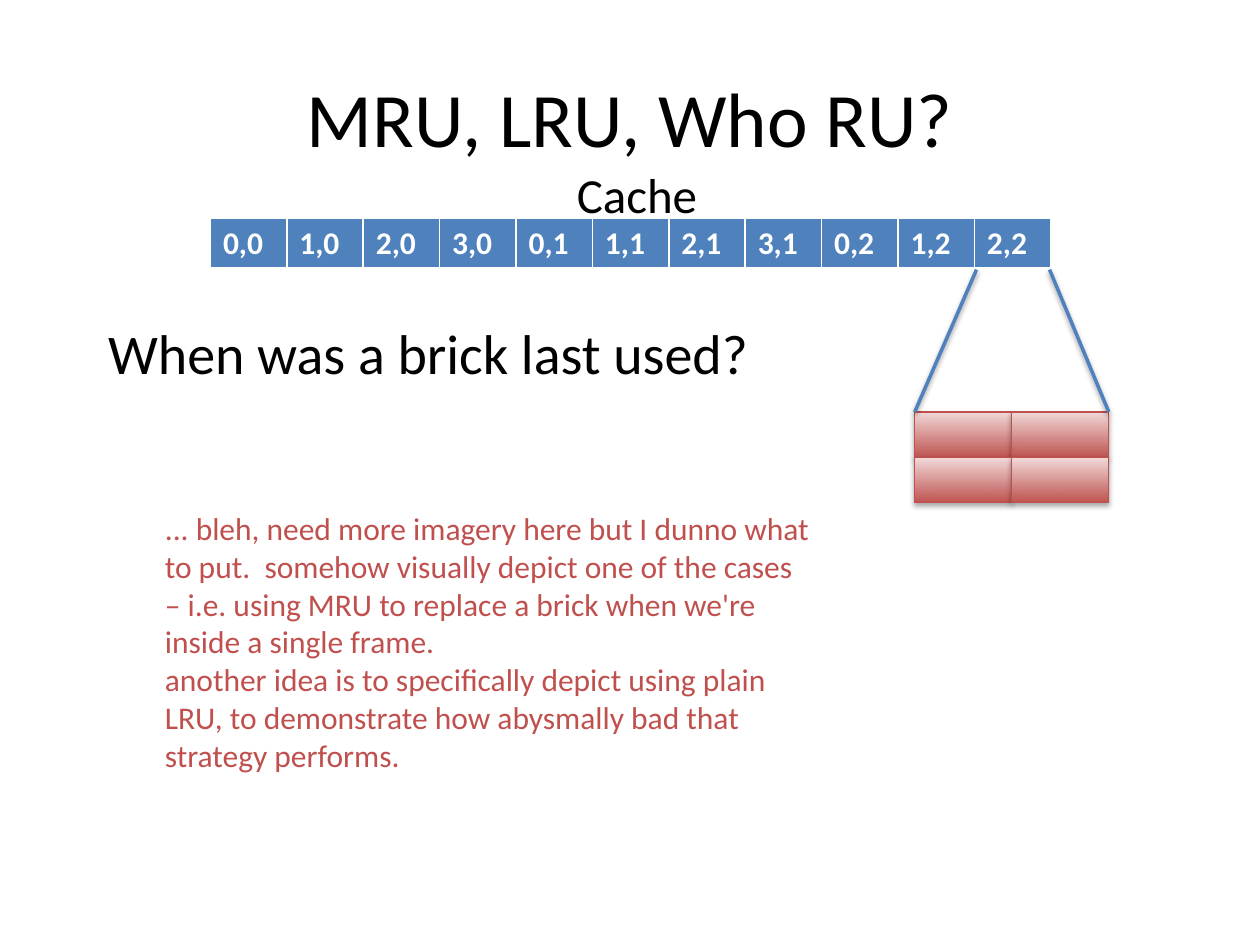
from dataclasses import dataclass

from lxml import etree
from pptx import Presentation
from pptx import oxml
from pptx import util as u
from pptx.dml.color import RGBColor
from pptx.enum import shapes, text
from pptx.oxml import ns


@dataclass(frozen=True)
class Theme:
    face: str = "Calibri"
    ink: str = "000000"
    white: str = "FFFFFF"
    blue: str = "4F81BD"
    red: str = "C0504D"
    pale: str = "F2DCDB"
    title: int = 44
    lead: int = 32
    label: int = 28
    body: int = 18


THEME = Theme()
CACHE = ["0,0", "1,0", "2,0", "3,0", "0,1", "1,1", "2,1", "3,1", "0,2", "1,2", "2,2"]
NOTES = [
    "... bleh, need more imagery here but I dunno what to put.  somehow visually "
    "depict one of the cases – i.e. using MRU to replace a brick when we're inside "
    "a single frame.",
    "another idea is to specifically depict using plain LRU, to demonstrate how "
    "abysmally bad that strategy performs.",
]


def inches(*sizes):
    return [u.Inches(size) for size in sizes]


def style(font, size, color, **more):
    values = {"name": THEME.face, "size": u.Pt(size), **more}
    for key, value in values.items():
        setattr(font, key, value)
    font.color.rgb = RGBColor.from_string(color)


def add_text(slide, box, lines, size, color, align=text.PP_ALIGN.LEFT,
             anchor=text.MSO_ANCHOR.TOP):
    frame = slide.shapes.add_textbox(*inches(*box)).text_frame
    frame.word_wrap = True
    frame.vertical_anchor = anchor
    frame.text = "\n".join(lines)
    for par in frame.paragraphs:
        par.alignment = align
        style(par.font, size, color)


def add_edges(cell):
    props = cell._tc.get_or_add_tcPr()
    for side, width in {"L": 1, "R": 1, "T": 1, "B": 3}.items():
        edge = etree.SubElement(props, ns.qn(f"a:ln{side}"), w=str(u.Pt(width)))
        fill = etree.SubElement(edge, ns.qn("a:solidFill"))
        etree.SubElement(fill, ns.qn("a:srgbClr"), val=THEME.white)


def add_cache(slide, box, names):
    table = slide.shapes.add_table(1, len(names), *inches(*box)).table
    for cell, name in zip(table.iter_cells(), names):
        add_edges(cell)
        cell.fill.solid()
        cell.fill.fore_color.rgb = RGBColor.from_string(THEME.blue)
        cell.text = name
        style(cell.text_frame.paragraphs[0].font, THEME.body, THEME.white, bold=True)


def add_shade(shape, dist, alpha):
    """Give the shape a soft shadow that falls straight down."""
    shape._element.spPr.append(oxml.parse_xml(
        f'<a:effectLst {ns.nsdecls("a")}>'
        f'<a:outerShdw blurRad="{u.Pt(3.1)}" dist="{u.Pt(dist)}" dir="5400000" '
        f'rotWithShape="0"><a:srgbClr val="000000"><a:alpha val="{alpha}000"/>'
        '</a:srgbClr></a:outerShdw></a:effectLst>'))


def set_line(line, color, width):
    line.color.rgb = RGBColor.from_string(color)
    line.width = u.Pt(width)


def add_brick(group, box):
    brick = group.shapes.add_shape(shapes.MSO_SHAPE.ROUND_1_RECTANGLE, *inches(*box))
    brick.adjustments[0] = 0
    brick.fill.gradient()
    brick.fill.gradient_angle = 90
    for stop, place, color in zip(brick.fill.gradient_stops, (0, 1),
                                  (THEME.red, THEME.pale)):
        stop.position = place
        stop.color.rgb = RGBColor.from_string(color)
    base = brick._element.xpath(".//a:gs/a:srgbClr")[0]
    etree.SubElement(base, ns.qn("a:alpha"), val="96000")
    set_line(brick.line, THEME.red, 0.75)
    add_shade(brick, 1.8, 35)


def add_ray(group, start, end):
    ray = group.shapes.add_connector(shapes.MSO_CONNECTOR.STRAIGHT,
                                     *inches(*start, *end))
    set_line(ray.line, THEME.blue, 2)
    add_shade(ray, 1.6, 38)


def add_zoom(slide, left, top, wide, high):
    """Show the last cache cell enlarged as a two by two block of bricks."""
    group = slide.shapes.add_group_shape()
    for row in range(2):
        for col in range(2):
            add_brick(group, (left + col * wide, top + row * high, wide, high))
    add_ray(group, (7.75, 2.14), (left, top))
    add_ray(group, (8.33, 2.14), (left + 2 * wide, top))


def main():
    deck = Presentation()
    deck.slide_width, deck.slide_height = inches(10, 7.5)
    slide = deck.slides.add_slide(deck.slide_layouts[6])
    add_text(slide, (0.5, 0.3, 9, 1.25), ["MRU, LRU, Who RU?"], THEME.title, THEME.ink,
             text.PP_ALIGN.CENTER, text.MSO_ANCHOR.MIDDLE)
    add_cache(slide, (1.67, 1.73, 6.67, 0.41), CACHE)
    add_text(slide, (4.48, 1.26, 1.38, 0.57), ["Cache"], THEME.label, THEME.ink)
    add_text(slide, (0.76, 2.48, 5.41, 0.64), ["When was a brick last used?"],
             THEME.lead, THEME.ink)
    add_zoom(slide, 7.26, 3.27, 0.77, 0.36)
    add_text(slide, (1.21, 3.99, 5.32, 2.22), NOTES, THEME.body, THEME.red)
    deck.save("out.pptx")


if __name__ == "__main__":
    main()
